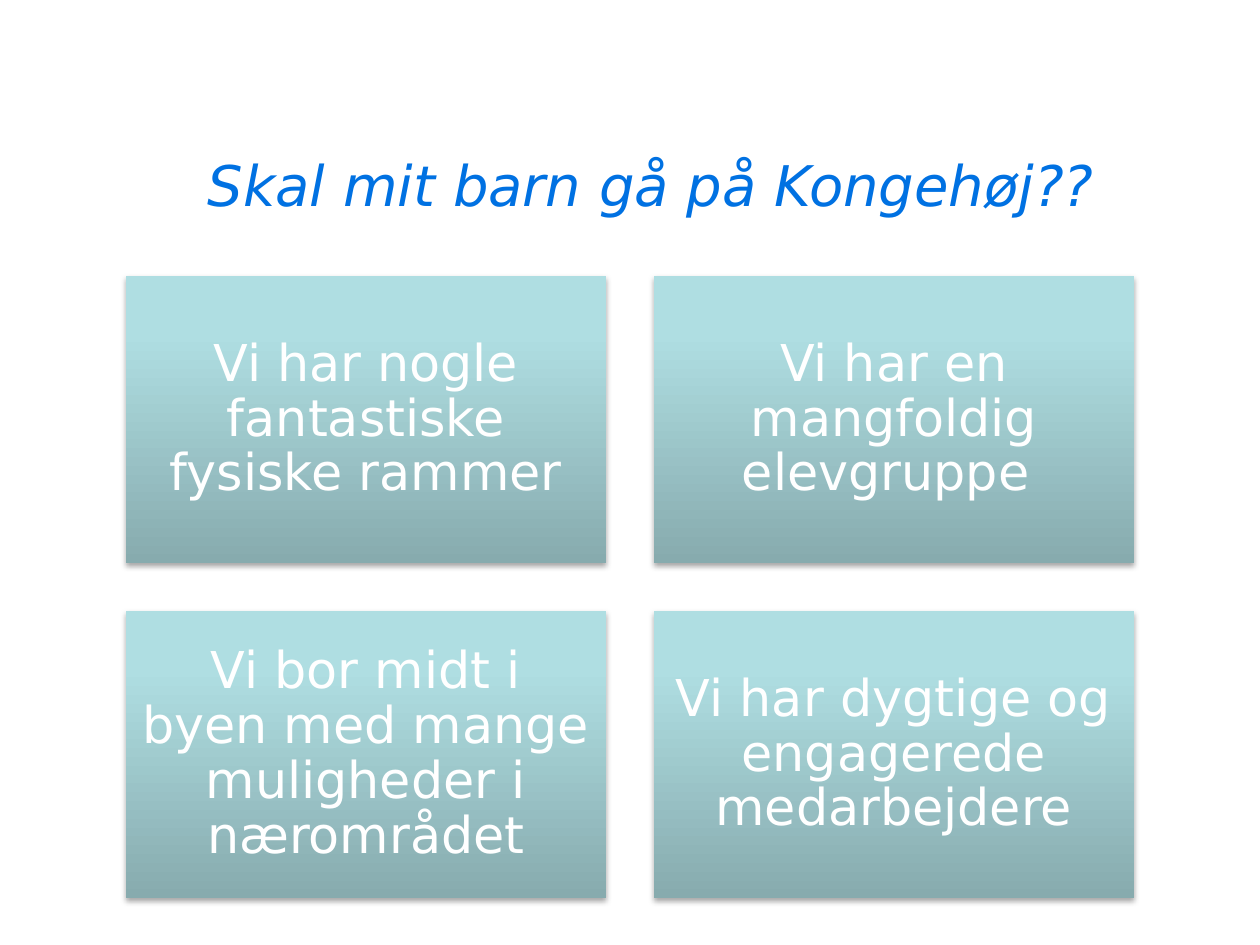
from copy import deepcopy

from lxml import etree
from pptx import Presentation
from pptx.dml.color import RGBColor
from pptx.enum.shapes import MSO_SHAPE
from pptx.enum.text import MSO_ANCHOR, PP_ALIGN
from pptx.oxml.ns import qn
from pptx.util import Inches, Pt

RECTANGLE = MSO_SHAPE.RECTANGLE
MIDDLE = MSO_ANCHOR.MIDDLE
CENTER = PP_ALIGN.CENTER

TITLE = "Skal mit barn gå på Kongehøj??"
REASONS = [
    "Vi har nogle fantastiske fysiske rammer",
    "Vi har en mangfoldig elevgruppe ",
    "Vi bor midt i byen med mange muligheder i nærområdet",
    "Vi har dygtige og engagerede medarbejdere",
]
LEFT, TOP, WIDTH, HEIGHT, GAP = 1, 2.19, 3.81, 2.28, 0.38


def color(value):
    return RGBColor.from_string(value)


class SlideBuilder:
    """Hold the style and the current page, and draw its elements."""

    font_name = "DejaVu Sans"
    gradient = [(0, "87ABAE"), (0.8, "AFDEE2"), (1, "AFE0E4")]
    title_format = {"size": Pt(32), "italic": True, "bold": False}
    card_format = {"size": Pt(29)}
    card_margin = Inches(0.12)

    def __init__(self, deck):
        self.page = deck.slides.add_slide(deck.slide_layouts[5])

    def fill_text(self, box, text, font_format, font_color):
        frame = box.text_frame
        frame.word_wrap = True
        frame.vertical_anchor = MIDDLE
        para = frame.paragraphs[0]
        para.alignment = CENTER
        span = para.add_run()
        span.text = text
        for name, value in {"name": self.font_name, **font_format}.items():
            setattr(span.font, name, value)
        span.font.color.rgb = color(font_color)
        return para

    def title(self, text, left, top, width, height):
        box = self.page.shapes.title
        box.left, box.top = Inches(left), Inches(top)
        box.width, box.height = Inches(width), Inches(height)
        self.fill_text(box, text, self.title_format, "0071E2")

    def paint(self, box):
        box.fill.gradient()
        box.fill.gradient_angle = 90
        stop_list = box.element.spPr.find(qn("a:gradFill")).find(qn("a:gsLst"))
        stop_list.append(deepcopy(stop_list[-1]))
        for stop, (position, value) in zip(box.fill.gradient_stops, self.gradient):
            stop.position = position
            stop.color.rgb = color(value)

    def cast_shadow(self, box):
        box.shadow.inherit = False
        effects = box.element.spPr.find(qn("a:effectLst"))
        shadow = etree.SubElement(
            effects, qn("a:outerShdw"), blurRad=str(Pt(3.1)), dist=str(Pt(1.8)),
            dir="5400000", rotWithShape="0")
        shade = etree.SubElement(shadow, qn("a:srgbClr"), val="000000")
        etree.SubElement(shade, qn("a:alpha"), val="35000")

    def card(self, text, left, top, width, height):
        box = self.page.shapes.add_shape(
            RECTANGLE, Inches(left), Inches(top), Inches(width), Inches(height))
        self.paint(box)
        box.line.fill.background()
        self.cast_shadow(box)
        for side in ("left", "top", "right", "bottom"):
            setattr(box.text_frame, f"margin_{side}", self.card_margin)
        para = self.fill_text(box, text, self.card_format, "FFFFFF")
        para.line_spacing = 0.9


def main():
    deck = Presentation()
    deck.slide_width, deck.slide_height = Inches(10), Inches(7.5)
    builder = SlideBuilder(deck)
    builder.title(TITLE, 0.67, 0.96, 9, 1)
    for index, reason in enumerate(REASONS):
        row, column = divmod(index, 2)
        builder.card(reason, LEFT + column * (WIDTH + GAP),
                     TOP + row * (HEIGHT + GAP), WIDTH, HEIGHT)
    deck.save("out.pptx")


if __name__ == "__main__":
    main()
